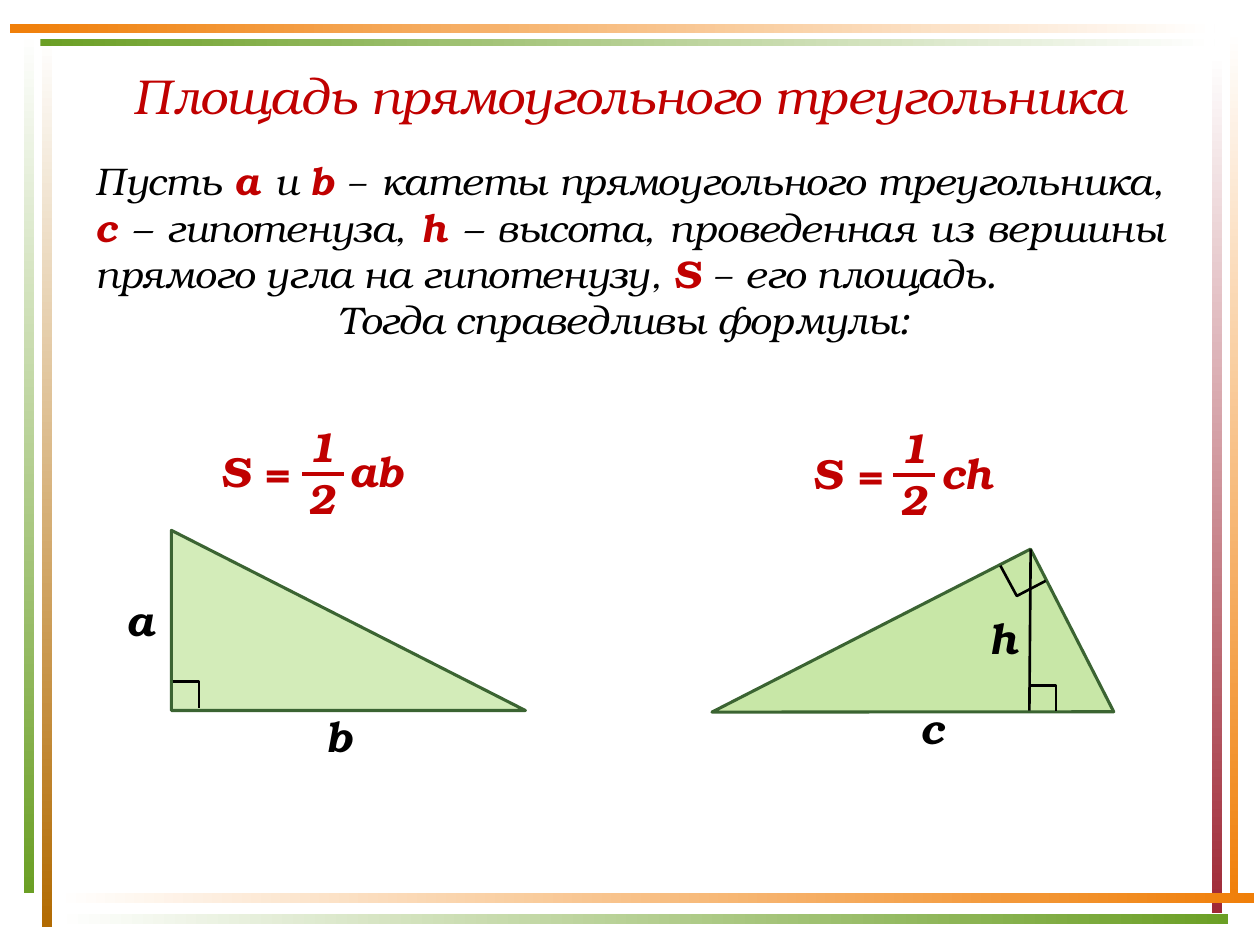
from lxml import etree
from pptx import Presentation
from pptx.dml.color import RGBColor
from pptx.enum.shapes import MSO_CONNECTOR, MSO_SHAPE
from pptx.enum.text import MSO_ANCHOR, PP_ALIGN
from pptx.oxml.ns import qn
from pptx.util import Inches, Pt

WHITE = RGBColor(0xFF, 0xFF, 0xFF)
BLACK = RGBColor(0, 0, 0)
RED = RGBColor(0xC0, 0, 0)
BROWN = RGBColor(0xB2, 0x6B, 0x02)
GREEN = RGBColor(0x6B, 0x9F, 0x25)
ORANGE = RGBColor(0xF0, 0x7F, 0x09)
WINE = RGBColor(0x9F, 0x29, 0x36)
LIME = RGBColor(0x92, 0xD0, 0x50)
DARK_GREEN = RGBColor(0x3B, 0x64, 0x32)
FONT = "TeX Gyre Bonum"
SYMBOL_FONT = "Vollkorn"


def add_run(p, text, size, color=BLACK, bold=False, font=FONT):
    r = p.add_run()
    r.text = text
    r.font.name = font
    r.font.size = Pt(size)
    r.font.italic = True
    r.font.bold = bold
    r.font.color.rgb = color


def add_box(x, y, w, h, wrap=True):
    tf = s.shapes.add_textbox(Inches(x), Inches(y), Inches(w), Inches(h)).text_frame
    tf.word_wrap = wrap
    return tf


prs = Presentation()
prs.slide_width, prs.slide_height = Inches(10), Inches(7.5)
s = prs.slides.add_slide(prs.slide_layouts[6])

bars = [
    (0.33, 0.28, 0.08, 7.08, WHITE, BROWN),
    (0.19, 0.25, 0.08, 6.84, WHITE, GREEN),
    (9.76, 0.24, 0.07, 6.93, WHITE, ORANGE),
    (9.62, 0.42, 0.08, 6.83, WHITE, WINE),
    (0.45, 7.09, 9.5, 0.08, WHITE, ORANGE),
    (0.45, 7.25, 9.3, 0.08, WHITE, GREEN),
    (0.32, 0.31, 9.32, 0.06, GREEN, WHITE),
    (0.08, 0.19, 9.56, 0.07, ORANGE, WHITE),
]
for x, y, w, h, start, end in bars:
    sp = s.shapes.add_shape(MSO_SHAPE.RECTANGLE, Inches(x), Inches(y), Inches(w), Inches(h))
    sp.shadow.inherit = False
    sp.line.fill.background()
    sp.fill.gradient()
    sp.fill.gradient_angle = 270 if h > w else 0
    for stop, color in zip(sp.fill.gradient_stops, (start, end)):
        stop.color.rgb = color

tf = add_box(0.62, 0.44, 8.75, 0.62)
tf.vertical_anchor = MSO_ANCHOR.MIDDLE
p = tf.paragraphs[0]
p.alignment = PP_ALIGN.CENTER
add_run(p, "Площадь прямоугольного треугольника", 28, RED)

tf = add_box(0.66, 1.2, 8.68, 1.58)
p = tf.paragraphs[0]
p.alignment = PP_ALIGN.JUSTIFY
for text, color, font in [
    ("Пусть ", BLACK, FONT),
    ("а ", RED, FONT),
    ("и ", BLACK, FONT),
    ("b ", RED, FONT),
    ("−", BLACK, SYMBOL_FONT),
    (" катеты прямоугольного треугольника, ", BLACK, FONT),
    ("c ", RED, FONT),
    ("– гипотенуза, ", BLACK, FONT),
    ("h ", RED, FONT),
    ("– высота, проведенная из вершины прямого угла на гипотенузу, ", BLACK, FONT),
    ("S ", RED, FONT),
    ("−", BLACK, SYMBOL_FONT),
    (" его площадь. ", BLACK, FONT),
]:
    add_run(p, text, 22, color, color == RED, font)
p = tf.add_paragraph()
p.alignment = PP_ALIGN.CENTER
add_run(p, "Тогда справедливы формулы: ", 22)

for x, y, product in [(1.65, 3.49, "ab"), (6.35, 3.5, "ch")]:
    p = add_box(x, y, 1.79, 0.5).paragraphs[0]
    tabs = etree.SubElement(p._p.get_or_add_pPr(), qn("a:tabLst"))
    etree.SubElement(tabs, qn("a:tab"), pos=str(Inches(1.02)), algn="l")
    add_run(p, f"S =\t{product}", 24, RED, True)
    for digit, dx, dy in [("1", 0.7, -0.2), ("2", 0.69, 0.21)]:
        p = add_box(x + dx, y + dy, 0.43, 0.5, False).paragraphs[0]
        add_run(p, digit, 24, RED, True)

for x, y, w, h, angle, alpha in [
    (2.05, 3.52, 1.43, 2.81, 270, 40),
    (6.52, 4.23, 1.45, 2.84, 62.9, 50),
]:
    sp = s.shapes.add_shape(MSO_SHAPE.RIGHT_TRIANGLE, Inches(x), Inches(y), Inches(w), Inches(h))
    sp.shadow.inherit = False
    sp.rotation = angle
    sp._element.spPr.find(qn("a:xfrm")).set("flipV", "1")
    sp.fill.solid()
    sp.fill.fore_color.rgb = LIME
    clr = sp._element.spPr.find(qn("a:solidFill")).find(qn("a:srgbClr"))
    etree.SubElement(clr, qn("a:alpha"), val=str(alpha * 1000))
    sp.line.color.rgb = DARK_GREEN
    sp.line.width = Pt(1.75)

for label, x, y in [("a", 0.9, 4.67), ("b", 2.49, 5.59), ("c", 7.21, 5.53), ("h", 7.75, 4.81)]:
    add_run(add_box(x, y, 0.43, 0.5, False).paragraphs[0], label, 24, BLACK, True)

for x1, y1, x2, y2, color, width in [
    (2.4, 3.76, 2.73, 3.76, RED, 2.25),
    (7.09, 3.77, 7.42, 3.77, RED, 2.25),
    (8.18, 4.36, 8.17, 5.64, BLACK, 1.5),
]:
    line = s.shapes.add_connector(MSO_CONNECTOR.STRAIGHT, Inches(x1), Inches(y1), Inches(x2), Inches(y2))
    line.line.color.rgb = color
    line.line.width = Pt(width)
    etree.SubElement(line._element.spPr, qn("a:effectLst"))

for corner in [
    [(1.37, 5.41), (1.58, 5.41), (1.58, 5.62)],
    [(8.3, 4.61), (8.07, 4.73), (7.94, 4.49)],
    [(8.17, 5.44), (8.38, 5.44), (8.38, 5.64)],
]:
    points = [(Inches(x), Inches(y)) for x, y in corner]
    fb = s.shapes.build_freeform(*points[0])
    fb.add_line_segments(points[1:], close=False)
    sp = fb.convert_to_shape()
    sp.shadow.inherit = False
    sp.fill.background()
    sp.line.color.rgb = BLACK
    sp.line.width = Pt(1.5)

prs.save("out.pptx")
